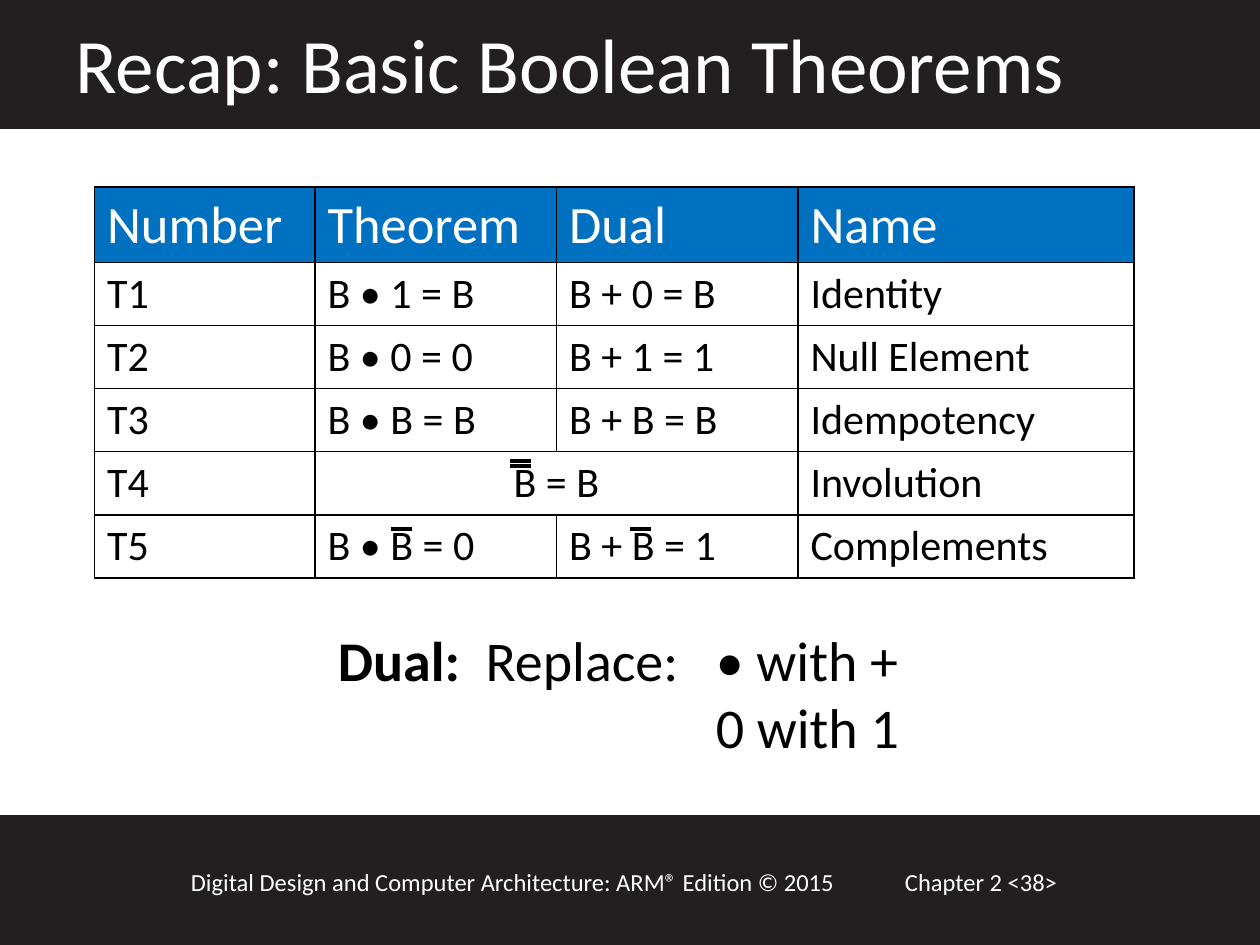
import pptx
import pptx.util
import pptx.dml.color
import pptx.enum.shapes
import pptx.enum.text
import pptx.oxml
import pptx.oxml.ns
from lxml import etree

THEME = {
    "font": "Calibri",
    "ink": pptx.dml.color.RGBColor.from_string("000000"),
    "paper": pptx.dml.color.RGBColor.from_string("FFFFFF"),
    "band": pptx.dml.color.RGBColor.from_string("231F20"),
    "header": pptx.dml.color.RGBColor.from_string("0070C0"),
    "title_size": 44, "dual_size": 32, "header_size": 30,
    "body_size": 24, "footer_size": 14,
}

deck = pptx.Presentation()
deck.slide_width = pptx.util.Inches(10)
deck.slide_height = pptx.util.Inches(7.5)
slide = deck.slides.add_slide(deck.slide_layouts[6])
unit = deck.slide_width / 120


def grid(*steps):
    return [pptx.util.Emu(round(step * unit)) for step in steps]


def style(paragraph, size, color):
    paragraph.font.name = THEME["font"]
    paragraph.font.size = pptx.util.Pt(size)
    paragraph.font.color.rgb = color


for top, height in ((77.8, 12.2), (0, 12.1)):
    band = slide.shapes.add_shape(
        pptx.enum.shapes.MSO_SHAPE.RECTANGLE, *grid(0, top, 120, height))
    band.shadow.inherit = False
    band.fill.solid()
    band.fill.fore_color.rgb = THEME["band"]
    band.line.color.rgb = THEME["band"]
    band.line.width = pptx.util.Pt(2)

labels = (
    ("Chapter 2 <38>", (85, 82, 26, 4.1), THEME["footer_size"]),
    ("Digital Design and Computer Architecture: ARM® Edition © 2015",
     (17, 82, 69, 4.1), THEME["footer_size"]),
    ("Recap: Basic Boolean Theorems", (6, 1, 108, 10.1), THEME["title_size"]),
)
for wording, place, size in labels:
    label = slide.shapes.add_textbox(*grid(*place)).text_frame
    label.word_wrap = True
    label.text = wording
    style(label.paragraphs[0], size, THEME["paper"])

theorems = (
    ("Number", "Theorem", "Dual", "Name"),
    ("T1", "B • 1 = B", "B + 0 = B", "Identity"),
    ("T2", "B • 0 = 0", "B + 1 = 1", "Null Element"),
    ("T3", "B • B = B", "B + B = B", "Idempotency"),
    ("T4", "B = B", "", "Involution"),
    ("T5", "B • B = 0", "B + B = 1", "Complements"),
)
column_widths = grid(21, 23, 23, 32)
row_heights = grid(7.2, *[6] * 5)
table = slide.shapes.add_table(
    len(theorems), len(column_widths), *grid(9, 17.8, 99, 37.2)).table
for column, width in zip(table.columns, column_widths):
    column.width = width
for row, height in zip(table.rows, row_heights):
    row.height = height
table.cell(4, 1).merge(table.cell(4, 2))

for r, theorem in enumerate(theorems):
    fill, ink, size = (
        (THEME["header"], THEME["paper"], THEME["header_size"]) if r == 0
        else (THEME["paper"], THEME["ink"], THEME["body_size"]))
    for c, wording in enumerate(theorem):
        cell = table.cell(r, c)
        cell.text = wording
        paragraph = cell.text_frame.paragraphs[0]
        style(paragraph, size, ink)
        paragraph.font.bold = False
        if cell.is_merge_origin:
            paragraph.alignment = pptx.enum.text.PP_ALIGN.CENTER
        cell.fill.solid()
        cell.fill.fore_color.rgb = fill
        properties = cell._tc.get_or_add_tcPr()
        for position, side in enumerate(("lnL", "lnR", "lnT", "lnB")):
            properties.insert(position, pptx.oxml.parse_xml(
                f'<a:{side} {pptx.oxml.ns.nsdecls("a")} w="12700"><a:solidFill>'
                f'<a:srgbClr val="{THEME["ink"]}"/></a:solidFill></a:{side}>'))

dual_rule = slide.shapes.add_textbox(*grid(31, 59, 57.6, 14.2)).text_frame
dual_rule.word_wrap = True
replacements = (
    (("Dual:", True), ("  Replace:\t• with +", False)),
    (("\t0 with 1", False),),
)
for i, parts in enumerate(replacements):
    paragraph = dual_rule.paragraphs[0] if i == 0 else dual_rule.add_paragraph()
    tabs = etree.SubElement(
        paragraph._p.get_or_add_pPr(), pptx.oxml.ns.qn("a:tabLst"))
    etree.SubElement(tabs, pptx.oxml.ns.qn("a:tab"),
                     pos=str(grid(36)[0]), algn="l")
    style(paragraph, THEME["dual_size"], THEME["ink"])
    for wording, bold in parts:
        run = paragraph.add_run()
        run.text = wording
        run.font.bold = bold

for left, top in ((37.2, 50.4), (60, 50.4), (48.6, 44.4), (48.6, 43.9)):
    overbar = slide.shapes.add_connector(
        pptx.enum.shapes.MSO_CONNECTOR.STRAIGHT, *grid(left, top, left + 2, top))
    overbar.line.color.rgb = THEME["ink"]
    overbar.line.width = pptx.util.Pt(2)
    etree.SubElement(overbar._element.spPr, pptx.oxml.ns.qn("a:effectLst"))

deck.save("out.pptx")
